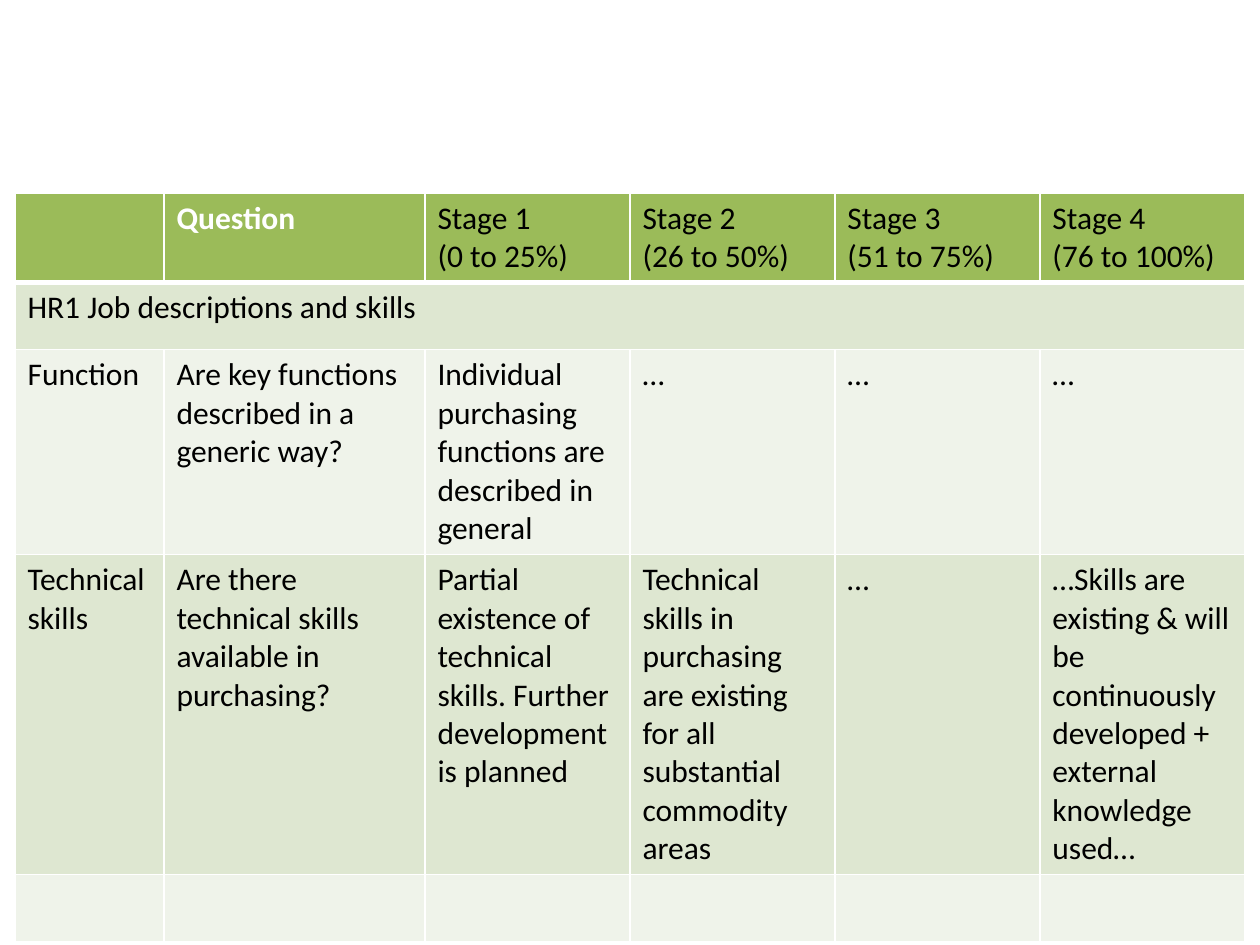
from dataclasses import dataclass

from lxml import etree
from pptx import Presentation
from pptx.dml.color import RGBColor
from pptx.oxml.ns import qn
from pptx.util import Emu, Pt

EMU_PER_PX = 914400 // 126
BLANK_LAYOUT = 6

TABLE_LEFT, TABLE_TOP = 15, 193
COLUMN_WIDTHS = [149, 261] + [205] * 4
ROW_HEIGHT = 67

STAGE_RANGES = ["0 to 25%", "26 to 50%", "51 to 75%", "76 to 100%"]
HEADER = ["", "Question"] + [
    f"Stage {number}\n({stage_range})"
    for number, stage_range in enumerate(STAGE_RANGES, start=1)
]
SECTION = ["HR1 Job descriptions and skills"] + [""] * 5
ROWS = [
    HEADER,
    SECTION,
    [
        "Function",
        "Are key functions described in a generic way?",
        "Individual purchasing functions are described in general",
        "…",
        "…",
        "…",
    ],
    [
        "Technical skills",
        "Are there technical skills available in purchasing?",
        "Partial existence of technical skills. Further development is planned",
        "Technical skills in purchasing are existing for all substantial commodity areas",
        "…",
        "…Skills are existing & will be continuously developed + external knowledge used…",
    ],
    [""] * 6,
]


@dataclass(frozen=True)
class Theme:
    font: str = "Calibri"
    text_size: int = 18
    text: str = "000000"
    header_text: str = "FFFFFF"
    header_fill: str = "9BBB59"
    band_fills: tuple = ("DEE7D1", "EFF3EA")
    border: str = "FFFFFF"
    border_width: int = 1
    header_rule_width: int = 3


THEME = Theme()


def px(length):
    return Emu(length * EMU_PER_PX)


def write_text(cell, text, color, bold):
    """Write each line of the text as its own paragraph."""
    text_frame = cell.text_frame
    for index, line in enumerate(text.split("\n")):
        paragraph = text_frame.add_paragraph() if index else text_frame.paragraphs[0]
        paragraph.font.size = Pt(THEME.text_size)
        if not line:
            continue
        run = paragraph.add_run()
        run.text = line
        run.font.name = THEME.font
        run.font.size = Pt(THEME.text_size)
        run.font.bold = bold
        run.font.color.rgb = RGBColor.from_string(color)


def set_borders(cell, top, bottom):
    """Draw all four sides; the schema wants them ahead of the fill."""
    properties = cell._tc.get_or_add_tcPr()
    widths = {"L": THEME.border_width, "R": THEME.border_width, "T": top, "B": bottom}
    for index, (side, width) in enumerate(widths.items()):
        line = etree.Element(qn(f"a:ln{side}"), w=str(Pt(width)))
        fill = etree.SubElement(line, qn("a:solidFill"))
        etree.SubElement(fill, qn("a:srgbClr"), val=THEME.border)
        properties.insert(index, line)


def format_cell(cell, row_index, text):
    is_header = row_index == 0
    is_question = text == "Question"
    fill = THEME.header_fill if is_header else THEME.band_fills[(row_index - 1) % 2]
    cell.fill.solid()
    cell.fill.fore_color.rgb = RGBColor.from_string(fill)
    set_borders(
        cell,
        top=THEME.header_rule_width if row_index == 1 else THEME.border_width,
        bottom=THEME.header_rule_width if is_header else THEME.border_width,
    )
    write_text(cell, text, THEME.header_text if is_question else THEME.text, is_question)


def add_maturity_table(slide):
    shape = slide.shapes.add_table(
        len(ROWS), len(COLUMN_WIDTHS),
        px(TABLE_LEFT), px(TABLE_TOP),
        px(sum(COLUMN_WIDTHS)), px(ROW_HEIGHT * len(ROWS)),
    )
    table = shape.table
    table.horz_banding = False
    for column, width in zip(table.columns, COLUMN_WIDTHS):
        column.width = px(width)
    for row_index, texts in enumerate(ROWS):
        table.rows[row_index].height = px(ROW_HEIGHT)
        for column_index, text in enumerate(texts):
            format_cell(table.cell(row_index, column_index), row_index, text)
    section_row = ROWS.index(SECTION)
    table.cell(section_row, 0).merge(table.cell(section_row, len(COLUMN_WIDTHS) - 1))


def main():
    presentation = Presentation()
    presentation.slide_width = px(1260)
    presentation.slide_height = px(945)
    slide = presentation.slides.add_slide(presentation.slide_layouts[BLANK_LAYOUT])
    add_maturity_table(slide)
    presentation.save("out.pptx")


if __name__ == "__main__":
    main()
